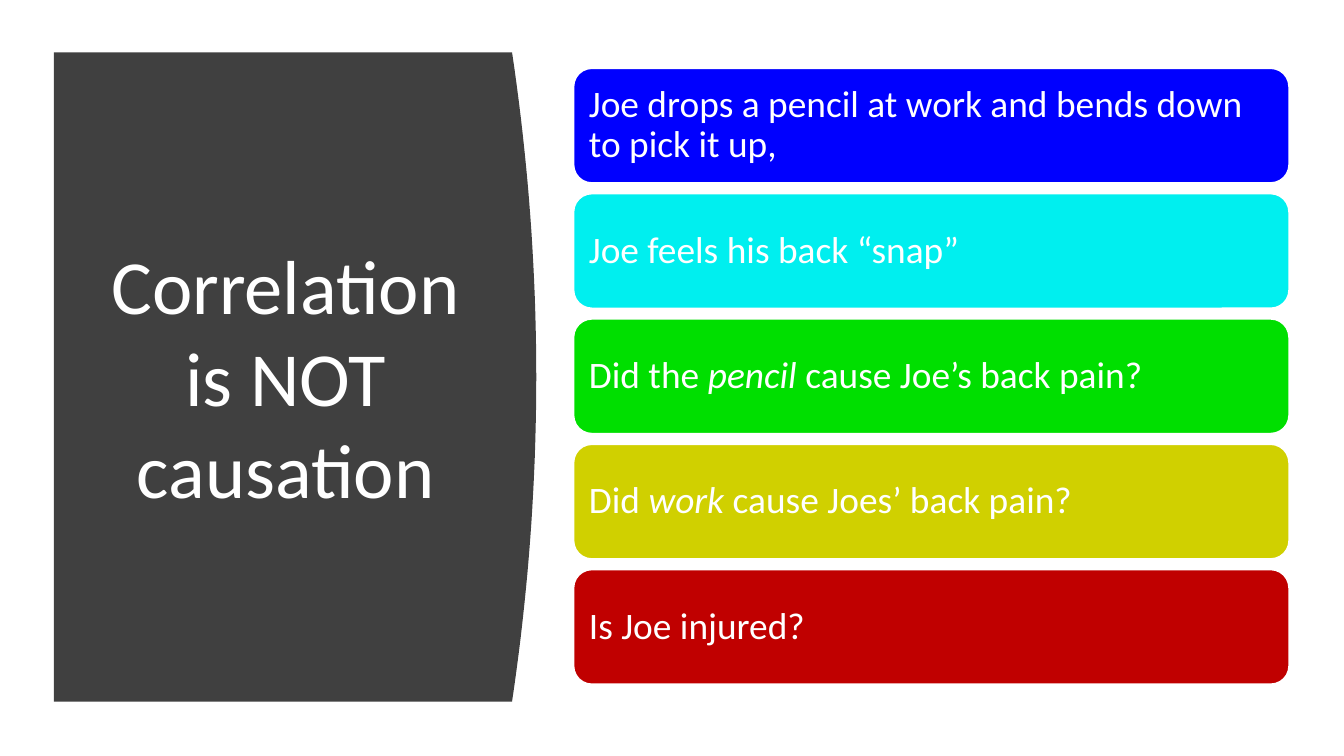
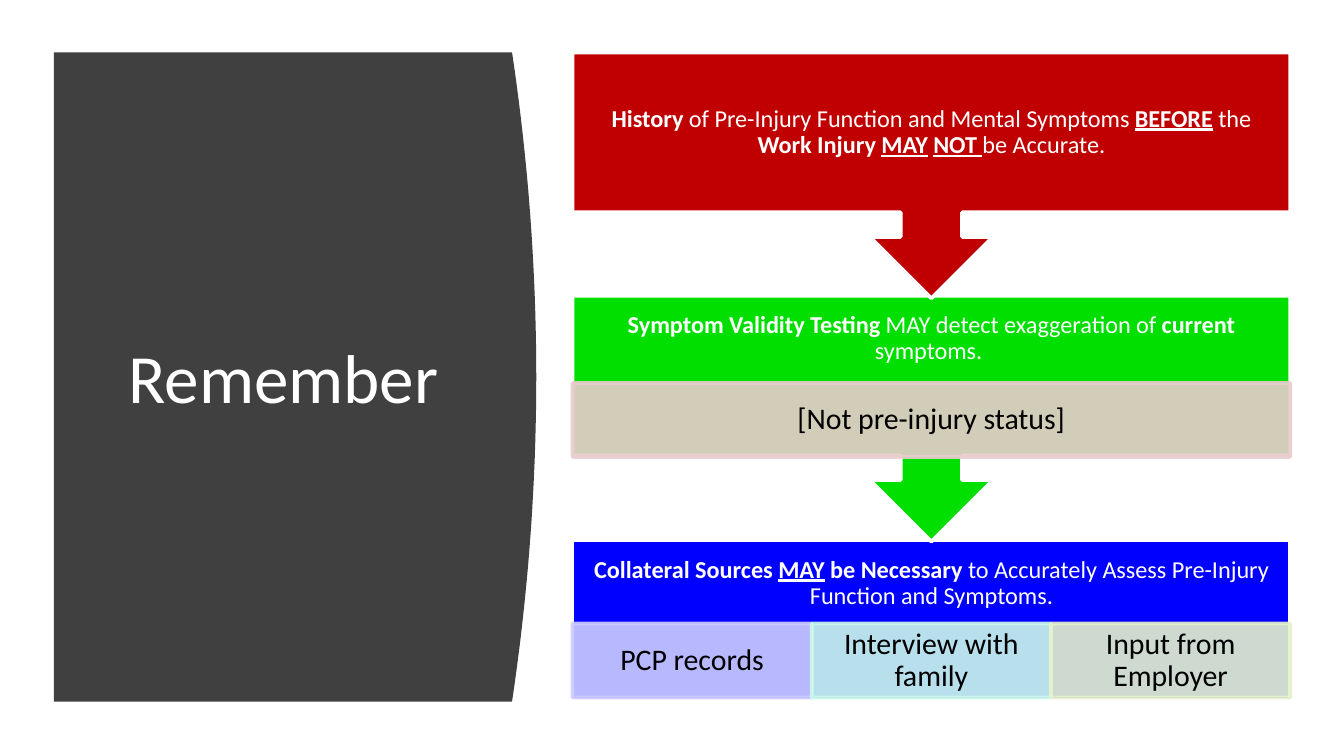
from lxml import etree
from pptx import Presentation
from pptx import util as u
from pptx.dml.color import RGBColor
from pptx.enum import shapes, text
from pptx.oxml.ns import qn

FONT = "Calibri"
WHITE, BLACK, CHARCOAL = "FFFFFF", "000000", "404040"
BLUE, CYAN, GREEN, YELLOW, RED = "0000FF", "00EFEF", "00DF00", "D0D000", "C00000"
LEFT, WIDTH = 4.26, 5.34
color = RGBColor.from_string


def add_box(slide, kind, box, fill, line=WHITE, opacity=100):
    shape = slide.shapes.add_shape(kind, *map(u.Inches, box))
    shape.shadow.inherit = False
    shape.fill.solid()
    shape.fill.fore_color.rgb = color(fill)
    shape.line.color.rgb = color(line)
    shape.line.width = u.Pt(2)
    if opacity < 100:
        for tint in shape.element.spPr.iter(qn("a:srgbClr")):
            etree.SubElement(tint, qn("a:alpha"), val=str(opacity * 1000))
    return shape


def write(shape, runs, size, ink, align, side, edge):
    """Fill a shape with (words, style) runs; style letters are b, i and u."""
    frame = shape.text_frame
    frame.word_wrap = True
    frame.auto_size = text.MSO_AUTO_SIZE.NONE
    frame.vertical_anchor = text.MSO_ANCHOR.MIDDLE
    frame.margin_left = frame.margin_right = u.Inches(side)
    frame.margin_top = frame.margin_bottom = u.Inches(edge)
    paragraph = frame.paragraphs[0]
    paragraph.alignment = align
    paragraph.line_spacing = 0.9
    paragraph.font.name = FONT
    paragraph.font.size = u.Pt(size)
    paragraph.font.color.rgb = color(ink)
    for words, style in runs:
        run = paragraph.add_run()
        run.text = words
        if "b" in style:
            run.font.bold = True
        if "i" in style:
            run.font.italic = True
        if "u" in style:
            run.font.underline = True


# Widescreen 16:9
presentation = Presentation()
presentation.slide_width = u.Inches(10)
presentation.slide_height = u.Inches(10 * 9 / 16)
centre = text.PP_ALIGN.CENTER

# Shared: dark panel with a bowed right edge, and the title on it
panel_left, panel_top, panel_bottom = 0.4, 0.39, 5.22
edge_x, bow, steps = 3.81, 0.18, 40
outline = []
for step in range(steps + 1):
    t = 2 * step / steps - 1
    x = edge_x + bow * (1 - t * t)
    y = panel_top + (panel_bottom - panel_top) * step / steps
    outline.append((u.Inches(x), u.Inches(y)))
outline.append((u.Inches(panel_left), u.Inches(panel_bottom)))

slides = []
for heading, size, left, width in [
    ("Correlation is NOT causation", 41, 0.5, 3.25),
    ("Remember", 37, 0.71, 2.8),
]:
    slide = presentation.slides.add_slide(presentation.slide_layouts[5])
    title = slide.shapes.title
    title.left, title.top = u.Inches(left), u.Inches(0.83)
    title.width, title.height = u.Inches(width), u.Inches(3.93)
    write(title, [(heading, "")], size, WHITE, centre, 0.1, 0.05)
    title.text_frame.paragraphs[0].line_spacing = 1.0

    builder = slide.shapes.build_freeform(u.Inches(panel_left), u.Inches(panel_top))
    builder.add_line_segments(outline, close=True)
    panel = builder.convert_to_shape()
    panel.shadow.inherit = False
    panel.fill.solid()
    panel.fill.fore_color.rgb = color(CHARCOAL)
    panel.line.fill.background()
    title.element.addprevious(panel.element)
    slides.append(slide)
story_slide, remember_slide = slides

# Slide 1: the story in five rounded bars
story = [
    (BLUE, [("Joe drops a pencil at work and bends down to pick it up,", "")]),
    (CYAN, [("Joe feels his back “snap”", "")]),
    (GREEN, [("Did the ", ""), ("pencil", "i"), (" cause Joe’s back pain?", "")]),
    (YELLOW, [("Did ", ""), ("work", "i"), (" cause Joes’ back pain?", "")]),
    (RED, [("Is Joe injured?", "")]),
]
first_top, last_top = 0.5, 4.23
pitch = (last_top - first_top) / (len(story) - 1)
for row, (fill, runs) in enumerate(story):
    bar = add_box(story_slide, shapes.MSO_SHAPE.ROUNDED_RECTANGLE,
                  (LEFT, first_top + pitch * row, WIDTH, 0.87), fill)
    write(bar, runs, 20, WHITE, text.PP_ALIGN.LEFT, 0.08, 0.08)

# Slide 2: three stages from the bottom up, each with its detail boxes
CALLOUT, RECTANGLE = shapes.MSO_SHAPE.UP_ARROW_CALLOUT, shapes.MSO_SHAPE.RECTANGLE
stages = [
    (RECTANGLE, BLUE, 4.02, 1.19, 0.64,
     [("Collateral Sources ", "b"), ("MAY", "bu"), (" be Necessary ", "b"),
      ("to Accurately Assess Pre-Injury Function and Symptoms.", "")],
     4.64, [("PCP records", "CCCCFF"), ("Interview with family", "CBF9EA"),
            ("Input from Employer", "E5F2CB")]),
    (CALLOUT, GREEN, 2.2, 1.83, 0.64,
     [("Symptom Validity Testing ", "b"), ("MAY detect exaggeration of ", ""),
      ("current ", "b"), ("symptoms. ", "")],
     2.85, [("[Not pre-injury status]", "E9CCCC")]),
    (CALLOUT, RED, 0.39, 1.83, 1.19,
     [("History", "b"), (" of Pre-Injury Function and Mental Symptoms ", ""),
      ("BEFORE", "bu"), (" the ", ""), ("Work Injury ", "b"), ("MAY", "bu"),
      (" ", "b"), ("NOT ", "bu"), ("be Accurate.", "")],
     None, []),
]
for kind, fill, top, height, text_height, runs, detail_top, details in stages:
    stage = add_box(remember_slide, kind, (LEFT, top, WIDTH, height), fill)
    if kind == CALLOUT:
        stage.rotation = 180
    label = remember_slide.shapes.add_textbox(
        *map(u.Inches, (LEFT, top, WIDTH, text_height)))
    write(label, runs, 13, WHITE, centre, 0.1, 0.1)
    for column, (words, tint) in enumerate(details):
        width = WIDTH / len(details)
        detail = add_box(remember_slide, RECTANGLE,
                         (LEFT + column * width, detail_top, width, 0.55),
                         tint, tint, 90)
        write(detail, [(words, "")], 16, BLACK, centre, 0.12, 0.02)

presentation.save("out.pptx")
